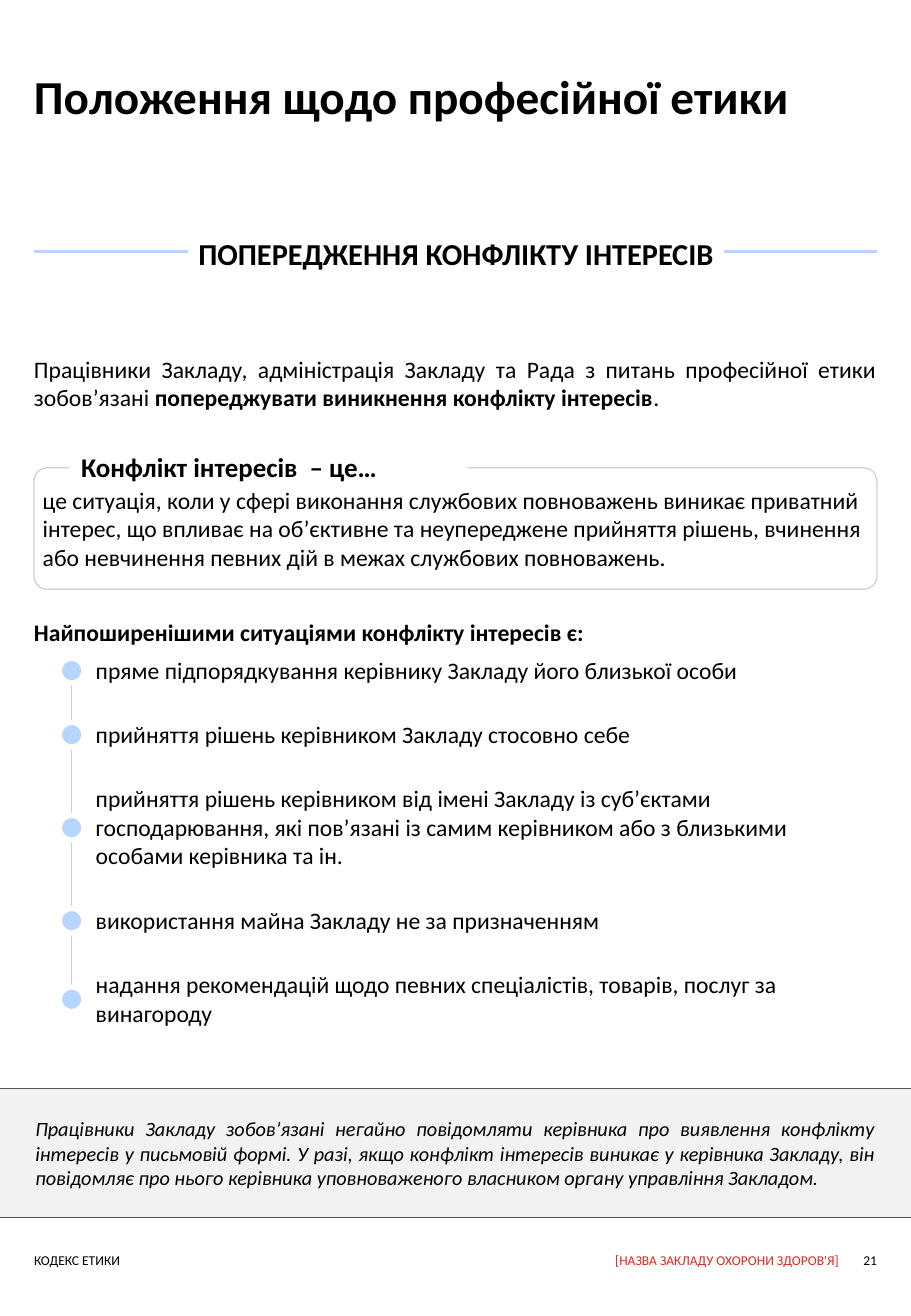
import pptx
import pptx.util
import pptx.dml.color
import pptx.enum.shapes
import pptx.enum.text
import lxml.etree

Pt = pptx.util.Pt
Kind = pptx.enum.shapes.MSO_SHAPE
Side = pptx.enum.text.PP_ALIGN
Mid = pptx.enum.text.MSO_ANCHOR.MIDDLE
Top = pptx.enum.text.MSO_ANCHOR.TOP


class Theme:
    font = "Calibri"
    ink, red, blue = "000000", "DA291C", "B7D6FF"
    white, pale, rule, edge = "FFFFFF", "F2F2F2", "D0D0CE", "53565A"
    title, head, term, body, note, foot = 28, 18, 16, 14, 12, 8


def rgb(code):
    return pptx.dml.color.RGBColor.from_string(code)


def write(shape, text, size, bold=False, color=Theme.ink, side=Side.LEFT,
          anchor=Top, pad=(0, 0), after=0):
    """Fill a shape with one styled paragraph; pad is (sides, top and bottom)."""
    frame = shape.text_frame
    frame.word_wrap = True
    frame.vertical_anchor = anchor
    frame.margin_left = frame.margin_right = Pt(pad[0])
    frame.margin_top = frame.margin_bottom = Pt(pad[1])
    para = frame.paragraphs[0]
    para.text = text
    para.alignment = side
    para.space_after = Pt(after)
    font = para.runs[0].font
    font.name, font.size, font.bold = Theme.font, Pt(size), bold
    font.color.rgb = rgb(color)
    return para


deck = pptx.Presentation()
deck.slide_width, deck.slide_height = Pt(540), Pt(779.76)
page = deck.slides.add_slide(deck.slide_layouts[6])
shapes = page.shapes
left, wide = 20.16, 499.7
right = left + wide

# Plain text: box, wording and style
texts = [
    ((280.8, 741.6, 216.7, 9.6), "[НАЗВА ЗАКЛАДУ ОХОРОНИ ЗДОРОВ'Я]",
     dict(size=Theme.foot, color=Theme.red, side=Side.RIGHT)),
    ((506.2, 741.6, 13.7, 9.6), "21", dict(size=Theme.foot, side=Side.RIGHT)),
    ((left, 741.6, 284.4, 11.5), "КОДЕКС ЕТИКИ", dict(size=Theme.foot)),
    ((left, 39.6, wide, 38.2), "Положення щодо професійної етики",
     dict(size=Theme.title, bold=True)),
    ((left, 362.2, wide, 24.5),
     "Найпоширенішими ситуаціями конфлікту інтересів є:",
     dict(size=Theme.body, bold=True, anchor=Mid, after=6)),
]
for box, text, style in texts:
    write(shapes.add_textbox(*map(Pt, box)), text, **style)

intro = shapes.add_textbox(*map(Pt, (left, 210.2, wide, 28.8)))
para = write(intro, "Працівники Закладу, адміністрація Закладу та Рада з питань "
             "професійної етики зобов’язані ", Theme.body,
             side=Side.JUSTIFY, after=6)
for text, bold in [("попереджувати виникнення конфлікту інтересів", True),
                   (".", False)]:
    run = para.add_run()
    run.text = text
    run.font.name, run.font.size, run.font.bold = Theme.font, Pt(Theme.body), bold
    run.font.color.rgb = rgb(Theme.ink)

# Situations: each row is as tall as its lines, with its dot at mid height
cases = [
    ("пряме підпорядкування керівнику Закладу його близької особи", 1),
    ("прийняття рішень керівником Закладу стосовно себе", 1),
    ("прийняття рішень керівником від імені Закладу із суб’єктами "
     "господарювання, які пов’язані із самим керівником або з близькими "
     "особами керівника та ін.", 3),
    ("використання майна Закладу не за призначенням", 1),
    ("надання рекомендацій щодо певних спеціалістів, товарів, послуг за "
     "винагороду", 2),
]
axis, dot, gap, row = 42.5, 14.4, 13.7, 385.2
rows = []
for text, lines in cases:
    high = 7.2 + 17.1 * lines
    rows.append((text, row, high))
    row += high + gap
mids = [top + high / 2 for text, top, high in rows]

# Lines: from, to, colour, weight
lines = [
    ((left, 149), (right, 149), Theme.blue, 2.25),
    ((axis, mids[0]), (axis, mids[-1]), Theme.rule, 0.75),
]
for start, end, color, weight in lines:
    line = shapes.add_connector(pptx.enum.shapes.MSO_CONNECTOR.STRAIGHT,
                                *map(Pt, start + end))
    line.line.color.rgb = rgb(color)
    line.line.width = Pt(weight)
    lxml.etree.SubElement(line._element.spPr,
                          pptx.oxml.ns.qn("a:effectLst"))

# Filled and framed shapes: kind, box, fill, line, weight, wording, style
forms = [
    (Kind.RECTANGLE, (111.6, 133.2, 317.5, 33.8), Theme.white, None, 0,
     "ПОПЕРЕДЖЕННЯ КОНФЛІКТУ ІНТЕРЕСІВ",
     dict(size=Theme.head, bold=True, side=Side.CENTER, anchor=Mid)),
    (Kind.ROUNDED_RECTANGLE, (left, 277.2, wide, 72), None, Theme.rule, 0.75,
     "це ситуація, коли у сфері виконання службових повноважень виникає "
     "приватний інтерес, що впливає на об’єктивне та неупереджене прийняття "
     "рішень, вчинення або невчинення певних дій в межах службових повноважень.",
     dict(size=Theme.body, anchor=Mid, pad=(2.88, 2.88), after=6)),
    (Kind.RECTANGLE, (41, 263.5, 236.2, 26.6), Theme.white, None, 0,
     "Конфлікт інтересів  – це…",
     dict(size=Theme.term, bold=True, pad=(7.2, 3.6))),
    (Kind.RECTANGLE, (-64.1, 645.1, 668.2, 76.3), Theme.pale, Theme.edge, 0.75,
     "Працівники Закладу зобов’язані негайно повідомляти керівника про "
     "виявлення конфлікту інтересів у письмовій формі. У разі, якщо конфлікт "
     "інтересів виникає у керівника Закладу, він повідомляє про нього керівника "
     "уповноваженого власником органу управління Закладом.",
     dict(size=Theme.note, side=Side.JUSTIFY, anchor=Mid, pad=(85, 2.88),
          after=6)),
]
for mid in mids:
    forms.append((Kind.OVAL, (axis - dot / 2, mid - dot / 2, dot, dot),
                  Theme.blue, Theme.white, 3, None, None))

for kind, box, fill, edge, weight, text, style in forms:
    form = shapes.add_shape(kind, *map(Pt, box))
    form.shadow.inherit = False
    if kind == Kind.ROUNDED_RECTANGLE:
        form.adjustments[0] = 0.11
    if fill:
        form.fill.solid()
        form.fill.fore_color.rgb = rgb(fill)
    else:
        form.fill.background()
    if edge:
        form.line.color.rgb = rgb(edge)
        form.line.width = Pt(weight)
    else:
        form.line.fill.background()
    if text:
        para = write(form, text, **style)
        para.runs[0].font.italic = fill == Theme.pale

for text, top, high in rows:
    label = shapes.add_textbox(*map(Pt, (49.7, top, 463.7, high)))
    write(label, text, Theme.body, pad=(7.2, 3.6))

deck.save("out.pptx")
